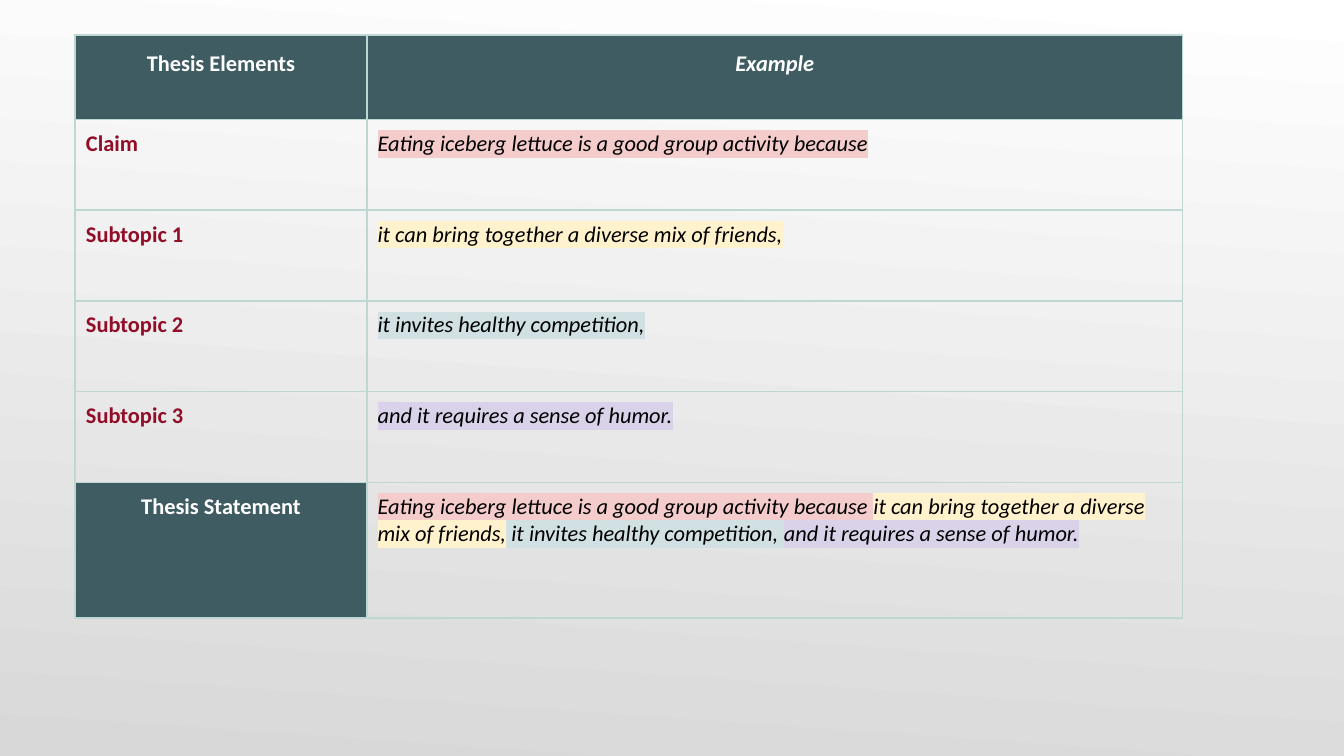
"""Build a slide with a table that assembles a thesis statement from its elements."""
from pptx import Presentation
from pptx.dml.color import RGBColor
from pptx.enum.text import PP_ALIGN
from pptx.oxml.ns import qn
from pptx.util import Inches, Pt
from lxml import etree

CENTER, LEFT = PP_ALIGN.CENTER, PP_ALIGN.LEFT
WHITE = RGBColor(0xFF, 0xFF, 0xFF)
BLACK = RGBColor(0x00, 0x00, 0x00)
GRAY = RGBColor(0xD8, 0xD8, 0xD8)
TEAL = RGBColor(0x3E, 0x5C, 0x61)
CRIMSON = RGBColor(0x91, 0x0D, 0x28)
BORDER = RGBColor(0xBE, 0xD7, 0xD3)
PINK = RGBColor(0xF4, 0xCC, 0xCC)
YELLOW = RGBColor(0xFF, 0xF2, 0xCC)
BLUE = RGBColor(0xD0, 0xE0, 0xE3)
PURPLE = RGBColor(0xD9, 0xD2, 0xE9)

HEADERS = ("Thesis Elements", "Example")
ELEMENTS = [
    ("Claim", [("Eating iceberg lettuce is a good group activity because", PINK)]),
    ("Subtopic 1", [("it can bring together a diverse mix of friends,", YELLOW)]),
    ("Subtopic 2", [("it invites healthy competition,", BLUE)]),
    ("Subtopic 3", [("and it requires a sense of humor.", PURPLE)]),
    ("Thesis Statement", [
        ("Eating iceberg lettuce is a good group activity because ", PINK),
        ("it can bring together a diverse mix of friends,", YELLOW),
        (" it invites healthy competition, ", BLUE),
        ("and it requires a sense of humor.", PURPLE),
    ]),
]
SLIDE_WIDTH = 10
SLIDE_HEIGHT = SLIDE_WIDTH * 9 / 16
COLUMN_WIDTHS = (2.17, 6.07)
ELEMENT_HEIGHT = 2.7 / 4
ROW_HEIGHTS = (0.63, *[ELEMENT_HEIGHT] * 4, 1.01)


def add_border(cell):
    properties = cell._tc.get_or_add_tcPr()
    for index, side in enumerate(("lnL", "lnR", "lnT", "lnB")):
        line = etree.Element(qn(f"a:{side}"), w=str(Pt(1)))
        fill = etree.SubElement(line, qn("a:solidFill"))
        etree.SubElement(fill, qn("a:srgbClr"), val=str(BORDER))
        properties.insert(index, line)


def add_highlight(span, color):
    highlight = etree.Element(qn("a:highlight"))
    etree.SubElement(highlight, qn("a:srgbClr"), val=str(color))
    span.font._element.find(qn("a:solidFill")).addnext(highlight)


def fill_cell(cell, spans, color, bold=False, italic=False, align=LEFT, fill=None):
    cell.margin_left = cell.margin_right = Inches(0.08)
    cell.margin_top = cell.margin_bottom = Inches(0.08)
    if fill is None:
        cell.fill.background()
    else:
        cell.fill.solid()
        cell.fill.fore_color.rgb = fill
    add_border(cell)
    para = cell.text_frame.paragraphs[0]
    para.alignment = align
    for text, highlight in spans:
        span = para.add_run()
        span.text = text
        font = span.font
        font.name, font.size = "Calibri", Pt(12)
        font.bold, font.italic = bold, italic
        font.color.rgb = color
        if highlight is not None:
            add_highlight(span, highlight)
    return para


def add_thesis_table(page):
    frame = page.shapes.add_table(
        len(ROW_HEIGHTS), len(COLUMN_WIDTHS), Inches(0.56), Inches(0.26),
        Inches(sum(COLUMN_WIDTHS)), Inches(sum(ROW_HEIGHTS)))
    table = frame.table
    table.first_row = table.horz_banding = False
    for column, width in zip(table.columns, COLUMN_WIDTHS):
        column.width = Inches(width)
    for row, height in zip(table.rows, ROW_HEIGHTS):
        row.height = Inches(height)

    for column, header in enumerate(HEADERS):
        para = fill_cell(table.cell(0, column), [(header, None)], WHITE, bold=True,
                         italic=header == "Example", align=CENTER, fill=TEAL)
        para.line_spacing = 1.15
        para.space_after = Pt(6)

    for row, (label, example) in enumerate(ELEMENTS, start=1):
        label_cell, example_cell = table.cell(row, 0), table.cell(row, 1)
        if label == "Thesis Statement":
            fill_cell(label_cell, [(label, None)], WHITE, bold=True,
                      align=CENTER, fill=TEAL)
        else:
            fill_cell(label_cell, [(label, None)], CRIMSON, bold=True)
        fill_cell(example_cell, example, BLACK, italic=True)


def main():
    deck = Presentation()
    deck.slide_width, deck.slide_height = Inches(SLIDE_WIDTH), Inches(SLIDE_HEIGHT)
    page = deck.slides.add_slide(deck.slide_layouts[6])
    background = page.background.fill
    background.gradient()
    background.gradient_angle = 266
    for stop, position, color in zip(background.gradient_stops, (0, 1), (WHITE, GRAY)):
        stop.position = position
        stop.color.rgb = color
    add_thesis_table(page)
    deck.save("out.pptx")


if __name__ == "__main__":
    main()
